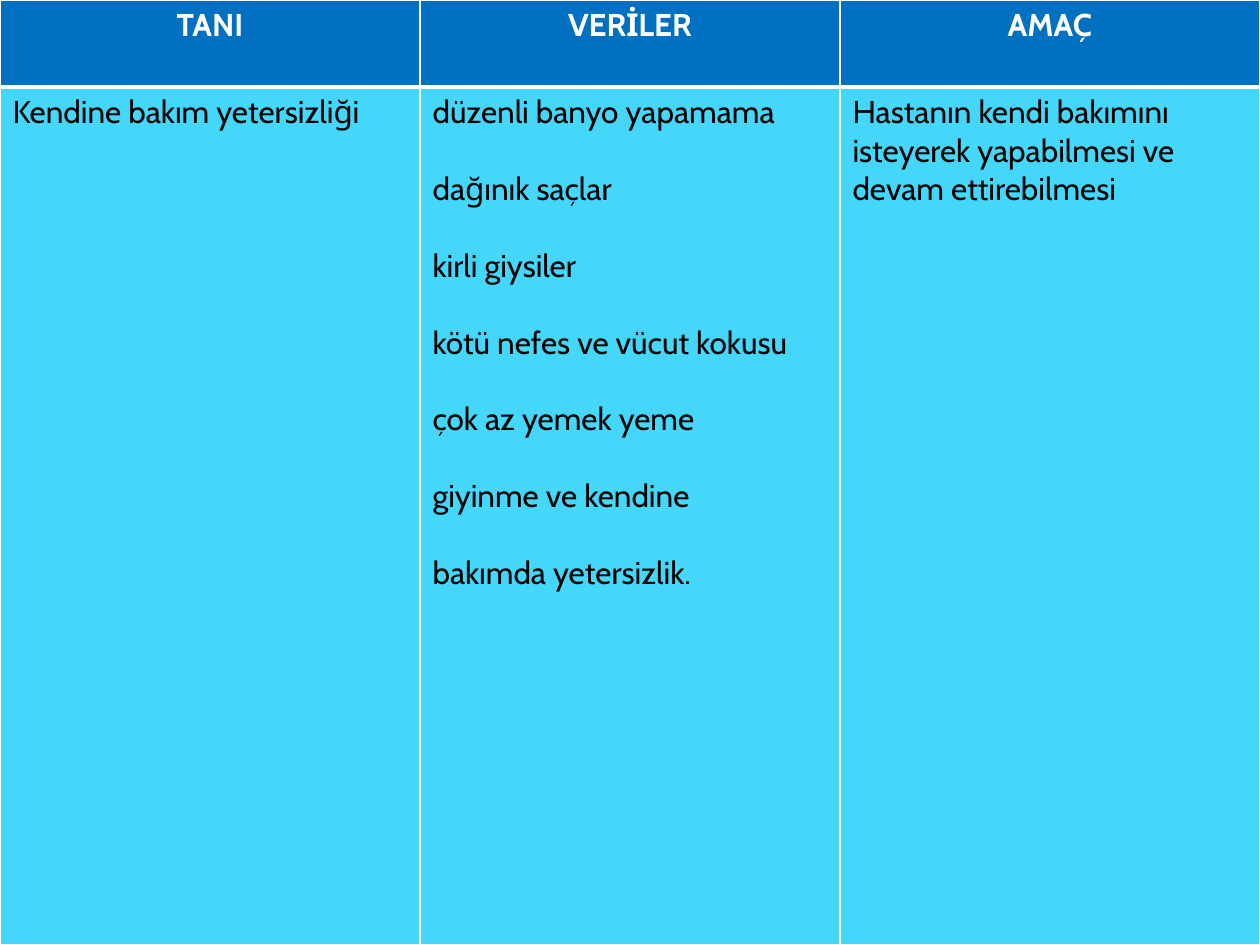
from lxml import etree
from pptx import Presentation
from pptx.dml.color import RGBColor
from pptx.enum.text import PP_ALIGN
from pptx.oxml.ns import qn
from pptx.util import Inches, Pt

CENTER, LEFT = PP_ALIGN.CENTER, PP_ALIGN.LEFT
WHITE = RGBColor(0xFF, 0xFF, 0xFF)
BLACK = RGBColor(0x00, 0x00, 0x00)
HEADER_BLUE = RGBColor(0x00, 0x70, 0xC0)
BODY_BLUE = RGBColor(0x44, 0xD7, 0xFA)
FONT = "Cabin"
TEXT_SIZE = Pt(18)
FINDING_GAP = Pt(21.9)  # one line of text
THIN, THICK = Pt(1), Pt(3)

WIDTH, HEIGHT, HEADER_HEIGHT = Inches(10), Inches(7.5), Inches(0.69)

# Heading of each column and the paragraphs beneath it
COLUMNS = [
    ("TANI", ["Kendine bakım yetersizliği"]),
    ("VERİLER", [
        "düzenli banyo yapamama",
        "dağınık saçlar",
        "kirli giysiler",
        "kötü nefes ve vücut kokusu",
        "çok az yemek yeme",
        "giyinme ve kendine",
        "bakımda yetersizlik.",
    ]),
    ("AMAÇ", ["Hastanın kendi bakımını isteyerek yapabilmesi ve devam ettirebilmesi"]),
]


def set_borders(cell, top, bottom):
    """White cell borders; the sides are always thin."""
    properties = cell._tc.get_or_add_tcPr()
    for side, width in (("L", THIN), ("R", THIN), ("T", top), ("B", bottom)):
        line = etree.SubElement(properties, qn(f"a:ln{side}"), w=str(width))
        fill = etree.SubElement(line, qn("a:solidFill"))
        etree.SubElement(fill, qn("a:srgbClr"), val=str(WHITE))


def fill_cell(cell, paragraphs, background, color, bold, alignment):
    cell.fill.solid()
    cell.fill.fore_color.rgb = background
    frame = cell.text_frame
    for index, text in enumerate(paragraphs):
        paragraph = frame.add_paragraph() if index else frame.paragraphs[0]
        paragraph.alignment = alignment
        if index:
            paragraph.space_before = FINDING_GAP
        run = paragraph.add_run()
        run.text = text
        run.font.name = FONT
        run.font.size = TEXT_SIZE
        run.font.bold = bold
        run.font.color.rgb = color


def main():
    prs = Presentation()
    prs.slide_width, prs.slide_height = WIDTH, HEIGHT
    slide = prs.slides.add_slide(prs.slide_layouts[6])

    care_plan = slide.shapes.add_table(2, len(COLUMNS), 0, 0, WIDTH, HEIGHT).table
    care_plan.rows[0].height = HEADER_HEIGHT
    care_plan.rows[1].height = HEIGHT - HEADER_HEIGHT

    for col, (heading, paragraphs) in enumerate(COLUMNS):
        header, body = care_plan.cell(0, col), care_plan.cell(1, col)
        set_borders(header, THIN, THICK)
        set_borders(body, THICK, THIN)
        fill_cell(header, [heading], HEADER_BLUE, WHITE, True, CENTER)
        fill_cell(body, paragraphs, BODY_BLUE, BLACK, False, LEFT)

    prs.save("out.pptx")


if __name__ == "__main__":
    main()
